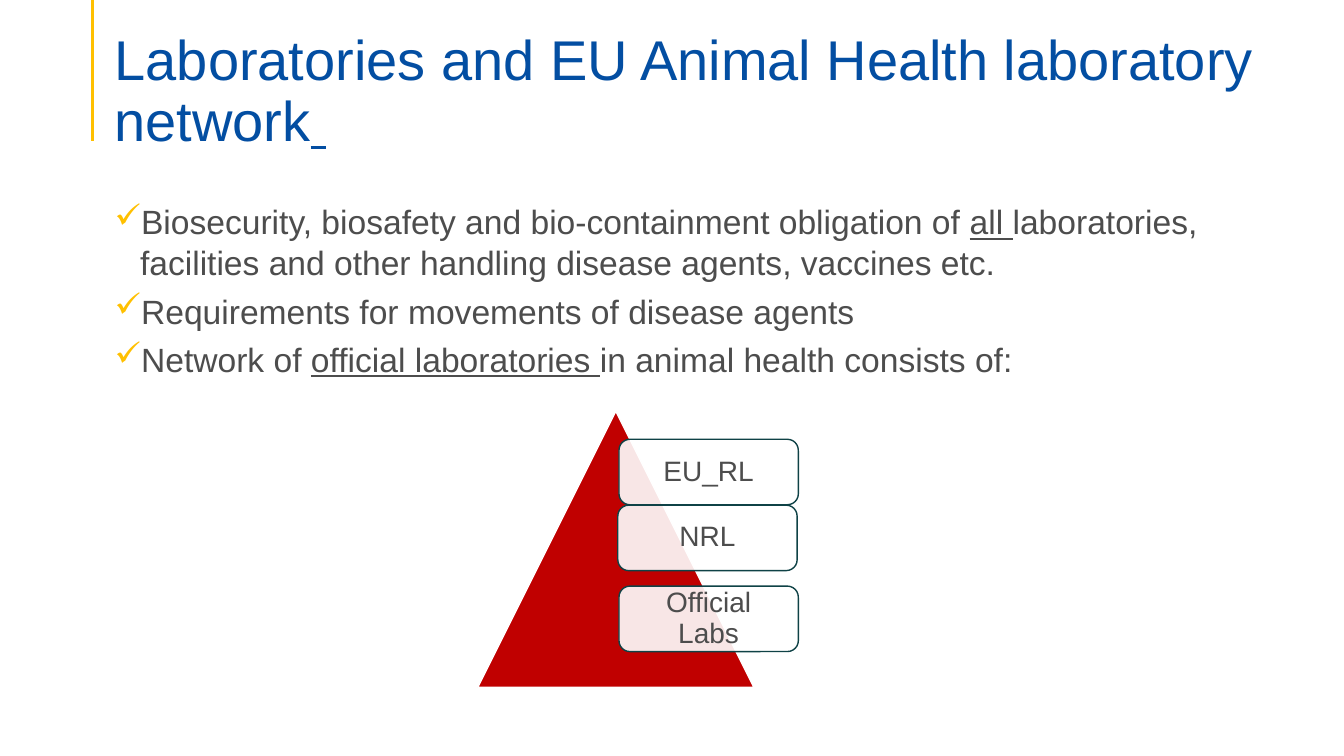
"""Builds the slide on laboratories and the EU animal health laboratory network."""
from lxml.etree import SubElement
from pptx import Presentation
from pptx.dml.color import RGBColor
from pptx.enum.shapes import MSO_CONNECTOR as Connector, MSO_SHAPE as Shape
from pptx.enum.text import MSO_ANCHOR as Anchor, PP_ALIGN as Align
from pptx.oxml.ns import qn
from pptx.util import Cm, Pt

COLORS = {"title": "034EA2", "text": "4D4D4D", "accent": "FFC000",
          "pyramid": "C00000", "outline": "0F4246", "white": "FFFFFF"}


def color(name):
    return RGBColor.from_string(COLORS[name])


class SlideBuilder:
    def __init__(self, slide, font="Arial"):
        self.shapes = slide.shapes
        self.font = font

    def add_spans(self, para, spans, size, ink):
        for text, underlined in spans:
            span = para.add_run()
            span.text = text
            span.font.name = self.font
            span.font.size = Pt(size)
            span.font.color.rgb = color(ink)
            if underlined:
                span.font.underline = True

    def text_box(self, left, top, width, height):
        box = self.shapes.add_textbox(Cm(left), Cm(top), Cm(width), Cm(height))
        box.text_frame.word_wrap = True
        return box.text_frame

    def title(self, spans, *place):
        frame = self.text_box(*place)
        frame.vertical_anchor = Anchor.BOTTOM
        frame.margin_bottom = 0
        para = frame.paragraphs[0]
        para.line_spacing = 0.9
        self.add_spans(para, spans, 40, "title")

    def checklist(self, items, *place):
        frame = self.text_box(*place)
        for index, spans in enumerate(items):
            para = frame.add_paragraph() if index else frame.paragraphs[0]
            properties = para._p.get_or_add_pPr()
            properties.set("marL", str(Cm(0.64)))
            properties.set("indent", str(Cm(-0.64)))
            bullet_color = SubElement(properties, qn("a:buClr"))
            SubElement(bullet_color, qn("a:srgbClr"), val=COLORS["accent"])
            SubElement(properties, qn("a:buChar"), char="✓")
            para.space_after = Pt(6)
            self.add_spans(para, spans, 24, "text")

    def rule(self, left, top, bottom):
        line = self.shapes.add_connector(
            Connector.STRAIGHT, Cm(left), Cm(top), Cm(left), Cm(bottom))
        line.line.color.rgb = color("accent")
        line.line.width = Pt(2.25)
        SubElement(line._element.spPr, qn("a:effectLst"))

    def shape(self, kind, left, top, width, height, fill, outline):
        shape = self.shapes.add_shape(kind, Cm(left), Cm(top), Cm(width), Cm(height))
        shape.shadow.inherit = False
        shape.fill.solid()
        shape.fill.fore_color.rgb = color(fill)
        shape.line.color.rgb = color(outline)
        shape.line.width = Pt(1)
        return shape

    def level(self, label, left, top):
        card = self.shape(Shape.ROUNDED_RECTANGLE, left, top, 4.52, 1.65, "white", "outline")
        tint = card._element.spPr.find(qn("a:solidFill")).find(qn("a:srgbClr"))
        SubElement(tint, qn("a:alpha"), val="90000")
        frame = card.text_frame
        frame.word_wrap = True
        frame.vertical_anchor = Anchor.MIDDLE
        frame.margin_left = frame.margin_right = Cm(0.25)
        frame.margin_top = frame.margin_bottom = Cm(0.25)
        para = frame.paragraphs[0]
        para.alignment = Align.CENTER
        para.line_spacing = 0.9
        self.add_spans(para, [(label, False)], 20, "text")


def main():
    deck = Presentation()
    deck.slide_width, deck.slide_height = Cm(33.87), Cm(19.05)
    page = SlideBuilder(deck.slides.add_slide(deck.slide_layouts[6]))

    page.rule(2.34, 0, 3.56)
    page.title([("Laboratories and EU Animal Health laboratory network", False), (" ", True)],
               2.64, 2.01, 29.21, 1.85)
    page.checklist([
        [("Biosecurity, biosafety and bio-containment obligation of ", False),
         ("all ", True),
         ("laboratories, facilities and other handling disease agents, vaccines etc.", False)],
        [("Requirements for movements of disease agents", False)],
        [("Network of ", False),
         ("official laboratories ", True),
         ("in animal health consists of:", False)],
    ], 2.64, 4.95, 28.8, 10.85)

    page.shape(Shape.ISOSCELES_TRIANGLE, 12.04, 10.36, 6.96, 6.96, "pyramid", "white")
    for label, left, top in (("EU_RL", 15.6, 11.07), ("NRL", 15.57, 12.73),
                             ("Official Labs", 15.6, 14.77)):
        page.level(label, left, top)

    deck.save("out.pptx")


if __name__ == "__main__":
    main()
